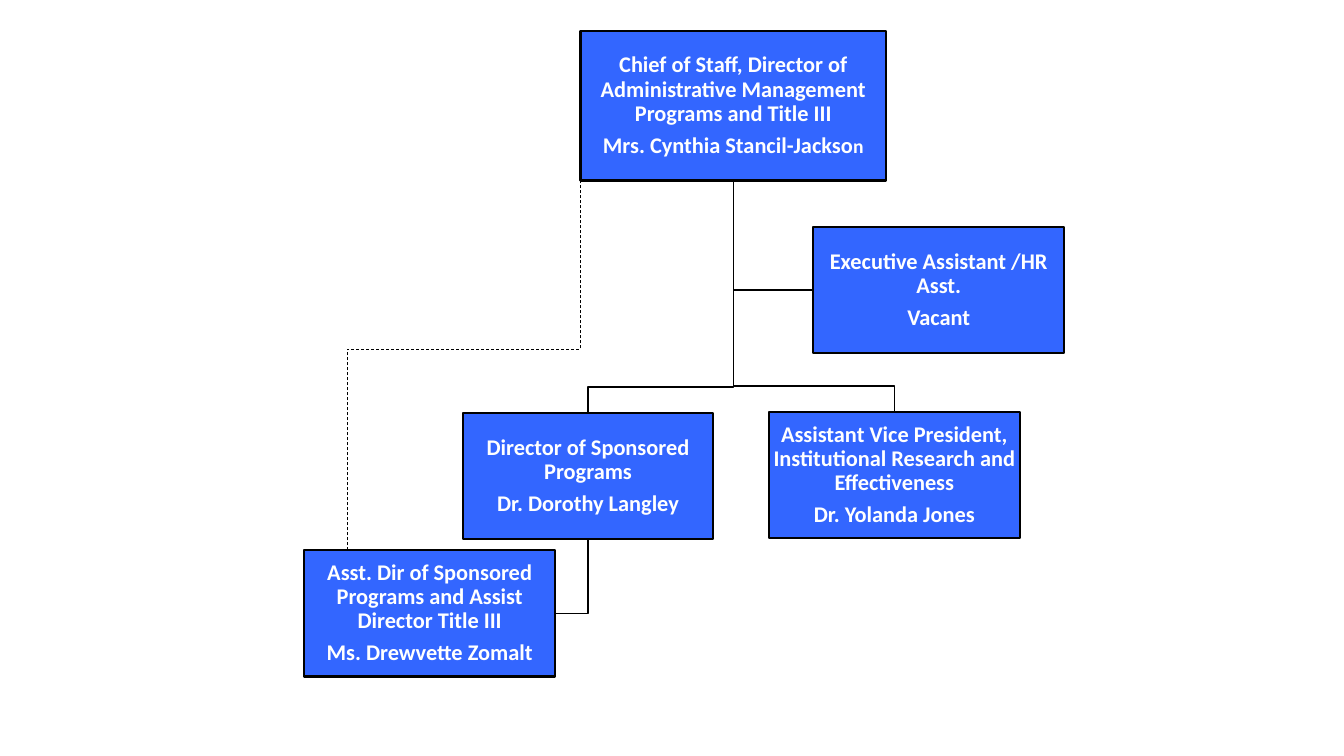
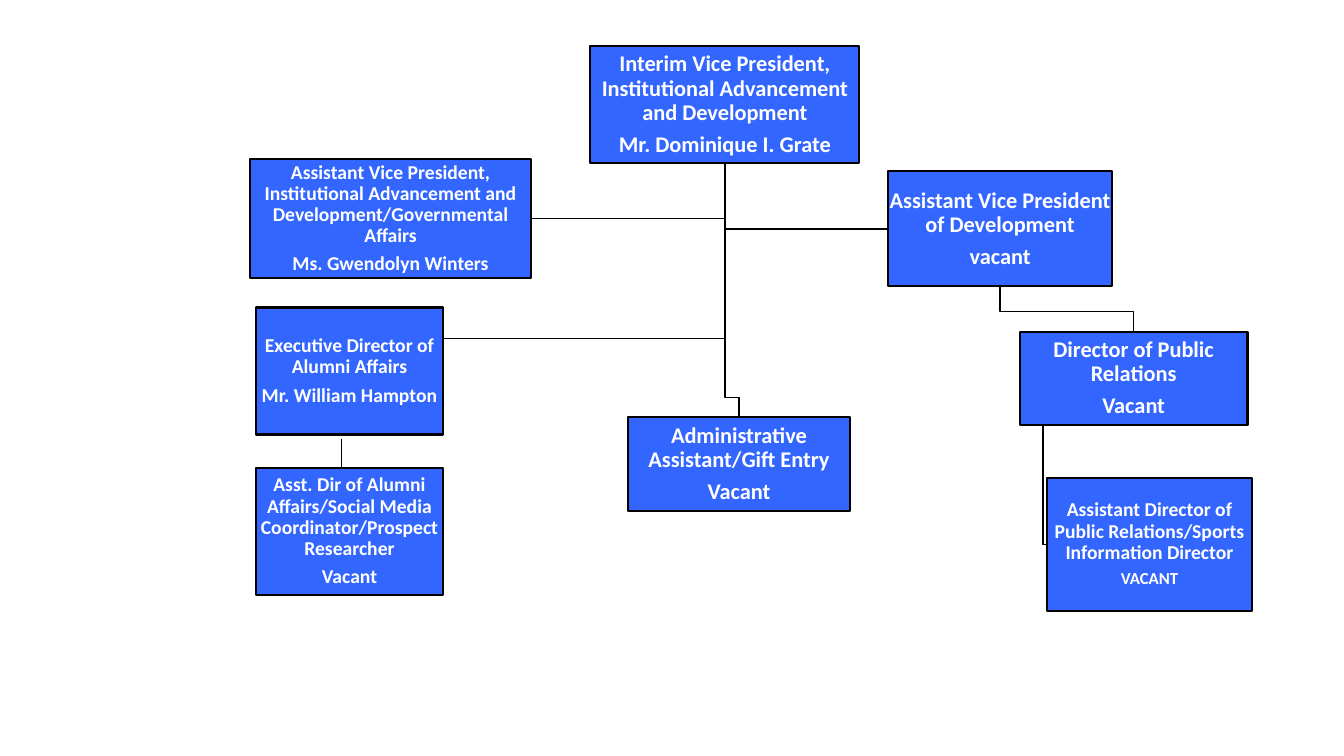
from dataclasses import dataclass

from lxml.etree import SubElement
from pptx import Presentation
from pptx.dml.color import RGBColor
from pptx.enum.dml import MSO_LINE
from pptx.enum.shapes import MSO_CONNECTOR, MSO_SHAPE
from pptx.enum.text import MSO_ANCHOR, PP_ALIGN
from pptx.oxml.ns import qn
from pptx.util import Cm, Pt

# Shared style
BOX_BLUE = "3366FF"
INK = "000000"
TEXT_WHITE = "FFFFFF"
FONT = "Calibri"
INSET = Cm(0.03)
QUARTER_TURN = "5400000"

Point = tuple[float, float]


@dataclass(frozen=True)
class Post:
    """One box of the chart; lengths in cm, sizes in points."""
    role: str
    holder: str
    left: float
    top: float
    width: float = 6.32
    height: float = 3.18
    size: int = 16
    holder_size: int = 0
    small_ending: str = ""

    @property
    def right(self) -> float:
        return self.left + self.width

    @property
    def bottom(self) -> float:
        return self.top + self.height

    @property
    def center(self) -> float:
        return self.left + self.width / 2

    @property
    def middle(self) -> float:
        return self.top + self.height / 2


def rgb(color: str) -> RGBColor:
    return RGBColor.from_string(color)


def set_line(line, width: float) -> None:
    line.color.rgb = rgb(INK)
    line.width = Pt(width)


def add_post(slide, post: Post) -> None:
    box = slide.shapes.add_shape(
        MSO_SHAPE.RECTANGLE, Cm(post.left), Cm(post.top), Cm(post.width), Cm(post.height))
    box.shadow.inherit = False
    box.fill.solid()
    box.fill.fore_color.rgb = rgb(BOX_BLUE)
    set_line(box.line, 1.5)

    frame = box.text_frame
    frame.word_wrap = True
    frame.vertical_anchor = MSO_ANCHOR.MIDDLE
    frame.margin_left = frame.margin_right = INSET
    frame.margin_top = frame.margin_bottom = INSET

    role, holder = frame.paragraphs[0], frame.add_paragraph()
    role.add_run().text = post.role
    holder.add_run().text = post.holder
    for paragraph, size in ((role, post.size), (holder, post.holder_size or post.size)):
        paragraph.alignment = PP_ALIGN.CENTER
        paragraph.line_spacing = 0.9
        paragraph.space_after = Pt(0.35 * size)
        paragraph.font.name = FONT
        paragraph.font.size = Pt(size)
        paragraph.font.bold = True
        paragraph.font.color.rgb = rgb(TEXT_WHITE)
    if post.small_ending:
        ending = holder.add_run()
        ending.text = post.small_ending
        ending.font.size = Pt(14)


def add_bent_link(slide, *points: Point) -> None:
    start, *rest = [(Cm(x), Cm(y)) for x, y in points]
    builder = slide.shapes.build_freeform(*start)
    builder.add_line_segments(rest, close=False)
    link = builder.convert_to_shape()
    link.shadow.inherit = False
    link.fill.background()
    set_line(link.line, 1)


def link_to_top(slide, boss: Post, report: Post, drop: float) -> None:
    """Go down from the boss, across, and down into the report."""
    turn = report.top - drop
    add_bent_link(slide, (boss.center, boss.bottom), (boss.center, turn),
                  (report.center, turn), (report.center, report.top))


def link_to_side(slide, start: Point, report: Post) -> None:
    """Go down from the start, then across to the nearer side of the report."""
    x, y = start
    side = report.left if x < report.left else report.right
    add_bent_link(slide, start, (x, report.middle), (side, report.middle))


def add_thin_line(slide, start: Point, end: Point, kind=MSO_CONNECTOR.STRAIGHT):
    line = slide.shapes.add_connector(
        kind, Cm(start[0]), Cm(start[1]), Cm(end[0]), Cm(end[1]))
    set_line(line.line, 0.5)
    SubElement(line._element.spPr, qn("a:effectLst"))
    return line


def add_dashed_elbow(slide, start: Point, end: Point) -> None:
    """Vertical-horizontal-vertical elbow: a standard elbow turned by 90 degrees."""
    mid_x, mid_y = (start[0] + end[0]) / 2, (start[1] + end[1]) / 2
    half_x, half_y = abs(end[0] - start[0]) / 2, abs(end[1] - start[1]) / 2
    elbow = add_thin_line(slide, (mid_x + half_y, mid_y + half_x),
                          (mid_x - half_y, mid_y - half_x), MSO_CONNECTOR.ELBOW)
    elbow.line.dash_style = MSO_LINE.DASH
    elbow._element.spPr.xfrm.set("rot", QUARTER_TURN)


def build_administration(slide) -> None:
    chief = Post("Chief of Staff, Director of Administrative Management Programs and Title III",
                 "Mrs. Cynthia Stancil-Jackso", 14.63, 0.79, 7.7, 3.76, small_ending="n")
    programs = Post("Director of Sponsored Programs", "Dr. Dorothy Langley", 11.66, 10.41)
    programs_assistant = Post("Asst. Dir of Sponsored Programs and Assist Director Title III",
                              "Ms. Drewvette Zomalt", 7.67, 13.87)
    research = Post("Assistant Vice President, Institutional Research and Effectiveness",
                    "Dr. Yolanda Jones", 19.38, 10.39)
    executive_assistant = Post("Executive Assistant /HR Asst.", "Vacant", 20.5, 5.72)

    # Reporting lines
    link_to_side(slide, (chief.center, chief.bottom), executive_assistant)
    link_to_side(slide, (programs.center, programs.bottom), programs_assistant)
    for report in (research, programs):
        link_to_top(slide, chief, report, drop=0.66)

    # Posts
    for post in (chief, programs, programs_assistant, research, executive_assistant):
        add_post(slide, post)

    # Secondary reporting line
    add_dashed_elbow(slide, (8.76, programs_assistant.top), (chief.left, 3.73))


def build_advancement(slide) -> None:
    vice_president = Post("Interim Vice President, Institutional Advancement and Development",
                          "Mr. Dominique I. Grate", 14.88, 1.17, 6.78, 2.95)
    gift_entry = Post("Administrative Assistant/Gift Entry", "Vacant", 15.82, 10.52, 5.61, 2.36)
    government = Post("Assistant Vice President, Institutional Advancement and "
                      "Development/Governmental Affairs",
                      "Ms. Gwendolyn Winters", 6.3, 4.01, 7.09, 3, size=14)
    development = Post("Assistant Vice President of Development", "vacant",
                       22.38, 4.32, 5.65, 2.9)
    relations = Post("Director of Public Relations", "Vacant", 25.7, 8.36, 5.74, 2.36)
    sports = Post("Assistant Director of Public Relations/Sports Information Director",
                  "VACANT", 26.39, 12.04, 5.16, 3.35, size=14, holder_size=12)
    alumni = Post("Executive Director of Alumni Affairs", "Mr. William Hampton",
                  6.45, 7.75, 4.72, 3.2, size=14)
    alumni_assistant = Post("Asst. Dir of Alumni Affairs/Social Media Coordinator/Prospect "
                            "Researcher", "Vacant", 6.45, 11.79, 4.72, 3.2, size=14)

    # Reporting lines
    link_to_side(slide, (26.29, relations.bottom), sports)
    for report in (development, government):
        link_to_side(slide, (vice_president.center, vice_president.bottom), report)
    for boss, report in ((development, relations), (vice_president, gift_entry)):
        link_to_top(slide, boss, report, drop=0.51)

    # Posts
    for post in (vice_president, gift_entry, government, development,
                 relations, sports, alumni, alumni_assistant):
        add_post(slide, post)

    # Alumni branch
    add_thin_line(slide, (alumni.right, 8.53), (vice_president.center, 8.53))
    add_thin_line(slide, (8.61, 11.05), (8.61, alumni_assistant.top))


def main() -> None:
    deck = Presentation()
    deck.slide_width, deck.slide_height = Cm(33.87), Cm(19.05)
    blank = deck.slide_layouts[6]
    for build in (build_administration, build_advancement):
        build(deck.slides.add_slide(blank))
    deck.save("out.pptx")


if __name__ == "__main__":
    main()
